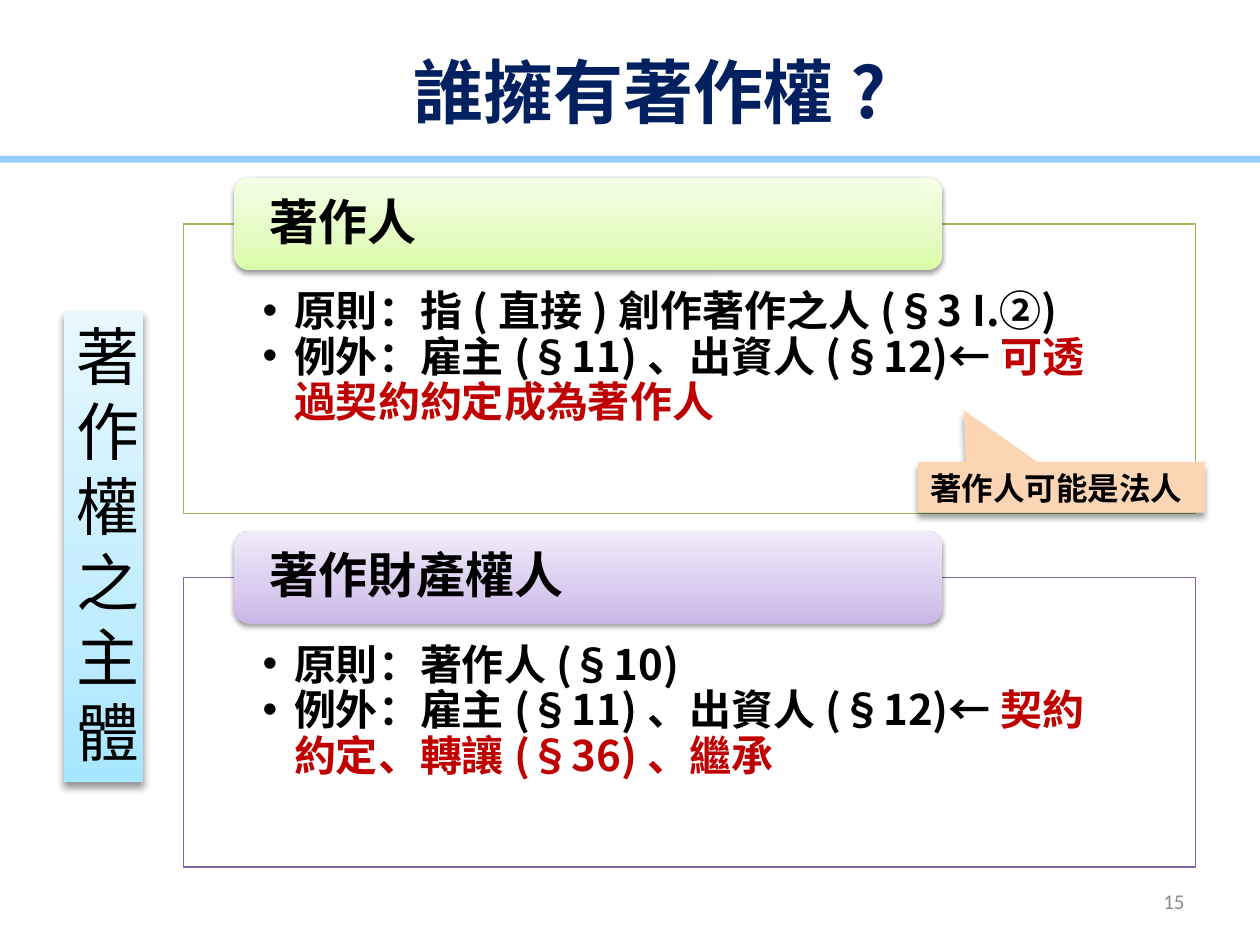
from dataclasses import dataclass

import pptx
import pptx.dml.color
import pptx.enum.shapes
import pptx.enum.text
import pptx.oxml
import pptx.oxml.ns
import pptx.util

Pt = pptx.util.Pt
SHAPE = pptx.enum.shapes.MSO_SHAPE
ALIGN = pptx.enum.text.PP_ALIGN
ANCHOR = pptx.enum.text.MSO_ANCHOR
qn = pptx.oxml.ns.qn
NS = pptx.oxml.ns.nsdecls("a")

SC, TC = "Noto Sans CJK SC", "Noto Sans CJK TC"
BLACK, RED = "000000", "C00000"


@dataclass
class Span:
    text: str
    color: str = BLACK
    font: str = SC


@dataclass
class Panel:
    heading: str
    top: float
    line: str
    gradient: tuple[str, str, str]
    bullets: list[list[Span]]


@dataclass
class Shadow:
    blur: float
    distance: float
    alpha: int


SOFT = Shadow(3.1, 1.6, 38)
DEEP = Shadow(4, 3, 40)

PANELS = [
    Panel("著作人", 128, "9BBB59", ("DAFDA7", "E4FCC2", "F5FFE7"), [
        [Span("原則：指(直接)創作著作之人(§3 I."), Span("②)", font=TC)],
        [Span("例外：雇主(§11)、出資人(§12)←"),
         Span("可透過契約約定成為著作人", RED)],
    ]),
    Panel("著作財產權人", 330, "8064A2", ("C9B5E8", "D8CBEE", "F0EAF9"), [
        [Span("原則：著作人(§10)")],
        [Span("例外：雇主(§11)、出資人(§12)←"),
         Span("契約約定、轉讓(§36)、繼承", RED)],
    ]),
]


def rgb(color: str) -> pptx.dml.color.RGBColor:
    return pptx.dml.color.RGBColor.from_string(color)


def style_run(r, size: float, color: str, bold: bool = False, font: str = SC) -> None:
    r.font.size, r.font.bold, r.font.name = Pt(size), bold, font
    r.font.color.rgb = rgb(color)
    ea = pptx.oxml.parse_xml(f'<a:ea {NS} typeface="{font}"/>')
    r.font._element.find(qn("a:latin")).addnext(ea)


def place(sp, x: float, y: float, w: float, h: float) -> None:
    sp.left, sp.top, sp.width, sp.height = Pt(x), Pt(y), Pt(w), Pt(h)


def set_frame(sp, anchor, left=7.2, top=3.6, right=7.2, bottom=3.6):
    tf = sp.text_frame
    tf.word_wrap = True
    tf.auto_size = pptx.enum.text.MSO_AUTO_SIZE.NONE
    tf.vertical_anchor = anchor
    tf.margin_left, tf.margin_top = Pt(left), Pt(top)
    tf.margin_right, tf.margin_bottom = Pt(right), Pt(bottom)
    return tf


def write(tf, text: str, size: float, color: str = BLACK, bold: bool = False,
          align=ALIGN.LEFT, font: str = SC, pitch: float | None = None) -> None:
    tf.text = text
    p = tf.paragraphs[0]
    p.alignment = align
    if pitch:
        p.line_spacing = Pt(pitch)
    style_run(p.runs[0], size, color, bold, font)


def add_block(shapes, kind, box: tuple, fill: str | tuple, shadow: Shadow | None = None):
    """Add a borderless shape; a tuple of colours makes a bottom-to-top gradient."""
    sp = shapes.add_shape(kind, *(Pt(v) for v in box))
    sp.line.fill.background()
    sp.shadow.inherit = False
    sp_pr = sp._element.spPr
    if isinstance(fill, str):
        sp.fill.solid()
        sp.fill.fore_color.rgb = rgb(fill)
    else:
        stops = "".join(f'<a:gs pos="{pos}"><a:srgbClr val="{c}"/></a:gs>'
                        for pos, c in zip((0, 35000, 100000), fill))
        sp_pr.find(qn("a:prstGeom")).addnext(pptx.oxml.parse_xml(
            f'<a:gradFill {NS} rotWithShape="1"><a:gsLst>{stops}</a:gsLst>'
            '<a:lin ang="16200000" scaled="0"/></a:gradFill>'))
    if shadow:
        sp_pr.find(qn("a:effectLst")).append(pptx.oxml.parse_xml(
            f'<a:outerShdw {NS} blurRad="{Pt(shadow.blur)}" dist="{Pt(shadow.distance)}" '
            'dir="5400000" rotWithShape="0"><a:srgbClr val="000000">'
            f'<a:alpha val="{shadow.alpha * 1000}"/></a:srgbClr></a:outerShdw>'))
    return sp


def add_panel(shapes, body, panel: Panel) -> None:
    place(body, 105, panel.top, 578, 165.5)
    body.fill.background()
    body.line.color.rgb = rgb(panel.line)
    body.line.width = Pt(0.75)
    tf = set_frame(body, ANCHOR.TOP, 45, 37.5, 45, 13.5)
    for i, spans in enumerate(panel.bullets):
        p = tf.add_paragraph() if i else tf.paragraphs[0]
        p.space_before = p.space_after = Pt(0)
        p.line_spacing = Pt(26)
        p_pr = p._p.get_or_add_pPr()
        p_pr.set("marL", str(Pt(18)))
        p_pr.set("indent", str(Pt(-18)))
        p_pr.append(pptx.oxml.parse_xml(f'<a:buChar {NS} char="•"/>'))
        for span in spans:
            r = p.add_run()
            r.text = span.text
            style_run(r, 24, span.color, True, span.font)

    header = add_block(shapes, SHAPE.ROUNDED_RECTANGLE,
                       (134, panel.top - 26.5, 404.5, 53), panel.gradient, SOFT)
    write(set_frame(header, ANCHOR.MIDDLE, 17.5, 0, 17.5, 4), panel.heading, 28, bold=True)


def main() -> None:
    prs = pptx.Presentation()
    prs.slide_width, prs.slide_height = Pt(720), Pt(540)
    s = prs.slides.add_slide(prs.slide_layouts[3])
    shapes = s.shapes

    add_block(shapes, SHAPE.RECTANGLE, (0, 89, 720, 4), "99CCFF")
    place(shapes.title, 184, 26, 375, 51)
    write(set_frame(shapes.title, ANCHOR.MIDDLE), "誰擁有著作權?", 40, "002060", True,
          ALIGN.CENTER)

    for body, panel in zip(list(s.placeholders)[1:], PANELS):
        add_panel(shapes, body, panel)

    number = shapes.add_textbox(Pt(516), Pt(500.5), Pt(168), Pt(29))
    write(set_frame(number, ANCHOR.MIDDLE), "15", 12, "8C8C8C", align=ALIGN.RIGHT,
          font="Calibri")

    label = add_block(shapes, SHAPE.RECTANGLE, (36.5, 178, 45.5, 269),
                      ("A7E6FF", "C1EDFF", "E7F8FF"), DEEP)
    write(set_frame(label, ANCHOR.TOP), "著作權之主體", 36, pitch=43)

    callout = add_block(shapes, SHAPE.RECTANGULAR_CALLOUT, (524.5, 264, 164, 29),
                        "FCD5B5", DEEP)
    callout.adjustments[0], callout.adjustments[1] = -0.34, -1.52
    write(set_frame(callout, ANCHOR.TOP), "著作人可能是法人", 18, bold=True, pitch=22)

    prs.save("out.pptx")


if __name__ == "__main__":
    main()
